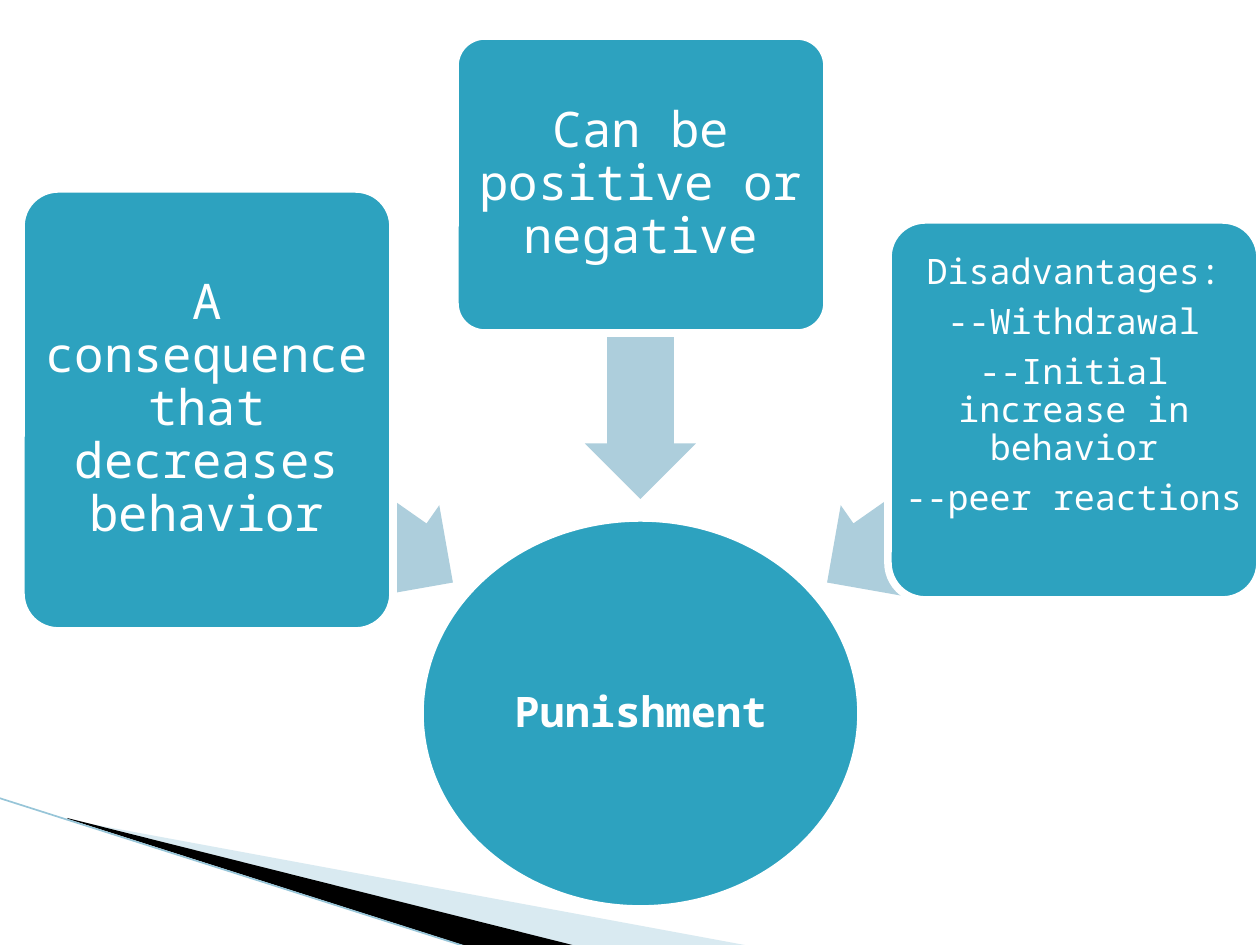
"""Build a slide showing three facts that point to punishment."""
from dataclasses import dataclass

from lxml.etree import SubElement
from pptx import Presentation
from pptx.dml.color import RGBColor
from pptx.enum.shapes import MSO_CONNECTOR, MSO_SHAPE
from pptx.enum.text import MSO_ANCHOR, PP_ALIGN
from pptx.oxml.ns import qn
from pptx.util import Pt

SCALE = 914400 / 126
FONT = "Noto Sans Mono"
HUES = {
    "teal": "2DA2BF",
    "arrow": "ADCEDC",
    "pale": "A0CBDC",
    "edge": "97C5D8",
    "black": "000000",
    "white": "FFFFFF",
}


@dataclass
class Node:
    kind: MSO_SHAPE
    left: int
    top: int
    width: int
    height: int
    lines: list[str]
    size: int
    bold: bool = False
    foot: int = 0


@dataclass
class Arrow:
    left: int
    top: int
    width: int
    turn: int


@dataclass
class Wedge:
    points: list[tuple[int, int]]
    hue: str
    alpha: int = 100


def px(count: int) -> int:
    return round(count * SCALE)


def color(name: str) -> RGBColor:
    return RGBColor.from_string(HUES[name])


def paint(shape, hue: str) -> None:
    shape.shadow.inherit = False
    shape.fill.solid()
    shape.fill.fore_color.rgb = color(hue)
    shape.line.fill.background()


def draw_wedge(slide, wedge: Wedge) -> None:
    first, *rest = wedge.points
    pen = slide.shapes.build_freeform(*first, scale=SCALE)
    pen.add_line_segments(rest, close=True)
    shape = pen.convert_to_shape()
    paint(shape, wedge.hue)
    if wedge.alpha < 100:
        tint = shape.fill._xPr.find(".//" + qn("a:srgbClr"))
        SubElement(tint, qn("a:alpha")).set("val", str(wedge.alpha * 1000))


def draw_edge(slide) -> None:
    line = slide.shapes.add_connector(
        MSO_CONNECTOR.STRAIGHT, px(-1), px(798), px(467), px(947))
    line.line.color.rgb = color("edge")
    line.line.width = Pt(0.95)
    SubElement(line._element.spPr, qn("a:effectLst"))


def draw_arrow(slide, arrow: Arrow) -> None:
    shape = slide.shapes.add_shape(
        MSO_SHAPE.LEFT_ARROW, px(arrow.left), px(arrow.top),
        px(arrow.width), px(111))
    shape.adjustments[0] = 0.6
    shape.adjustments[1] = 0.5
    shape.rotation = arrow.turn
    paint(shape, "arrow")


def draw_node(slide, node: Node) -> None:
    shape = slide.shapes.add_shape(
        node.kind, px(node.left), px(node.top),
        px(node.width), px(node.height))
    paint(shape, "teal")
    shape.line.color.rgb = color("white")
    shape.line.width = Pt(4.33)
    if node.kind == MSO_SHAPE.ROUNDED_RECTANGLE:
        shape.adjustments[0] = 0.1
    frame = shape.text_frame
    frame.word_wrap = True
    frame.vertical_anchor = MSO_ANCHOR.MIDDLE
    frame.margin_left = frame.margin_right = frame.margin_top = 0
    frame.margin_bottom = px(node.foot)
    for index, text in enumerate(node.lines):
        para = frame.add_paragraph() if index else frame.paragraphs[0]
        para.alignment = PP_ALIGN.CENTER
        para.line_spacing = 0.9
        para.space_after = Pt(round(node.size * 0.35))
        run = para.add_run()
        run.text = text
        run.font.name = FONT
        run.font.size = Pt(node.size)
        run.font.bold = node.bold
        run.font.color.rgb = color("white")


WEDGES = [
    Wedge([(69, 820), (750, 946), (575, 946), (69, 819)], "pale", 40),
    Wedge([(67, 818), (576, 946), (469, 947), (68, 819)], "black"),
]
ARROWS = [
    Arrow(180, 441, 300, 215),
    Arrow(483, 286, 315, 270),
    Arrow(800, 441, 300, 325),
]
BOX = MSO_SHAPE.ROUNDED_RECTANGLE
NODES = [
    Node(MSO_SHAPE.OVAL, 420, 518, 441, 391, ["Punishment"], 24, True),
    Node(BOX, 21, 189, 372, 442,
         ["A consequence that decreases behavior"], 28),
    Node(BOX, 455, 36, 372, 297, ["Can be positive or negative"], 28),
    Node(BOX, 888, 220, 372, 380,
         ["Disadvantages:", "--Withdrawal",
          "--Initial increase in behavior", "--peer reactions"],
         20, foot=48),
]


def main() -> None:
    deck = Presentation()
    deck.slide_width, deck.slide_height = px(1260), px(945)
    slide = deck.slides.add_slide(deck.slide_layouts[6])
    for wedge in WEDGES:
        draw_wedge(slide, wedge)
    draw_edge(slide)
    for arrow in ARROWS:
        draw_arrow(slide, arrow)
    for node in NODES:
        draw_node(slide, node)
    deck.save("out.pptx")


if __name__ == "__main__":
    main()
